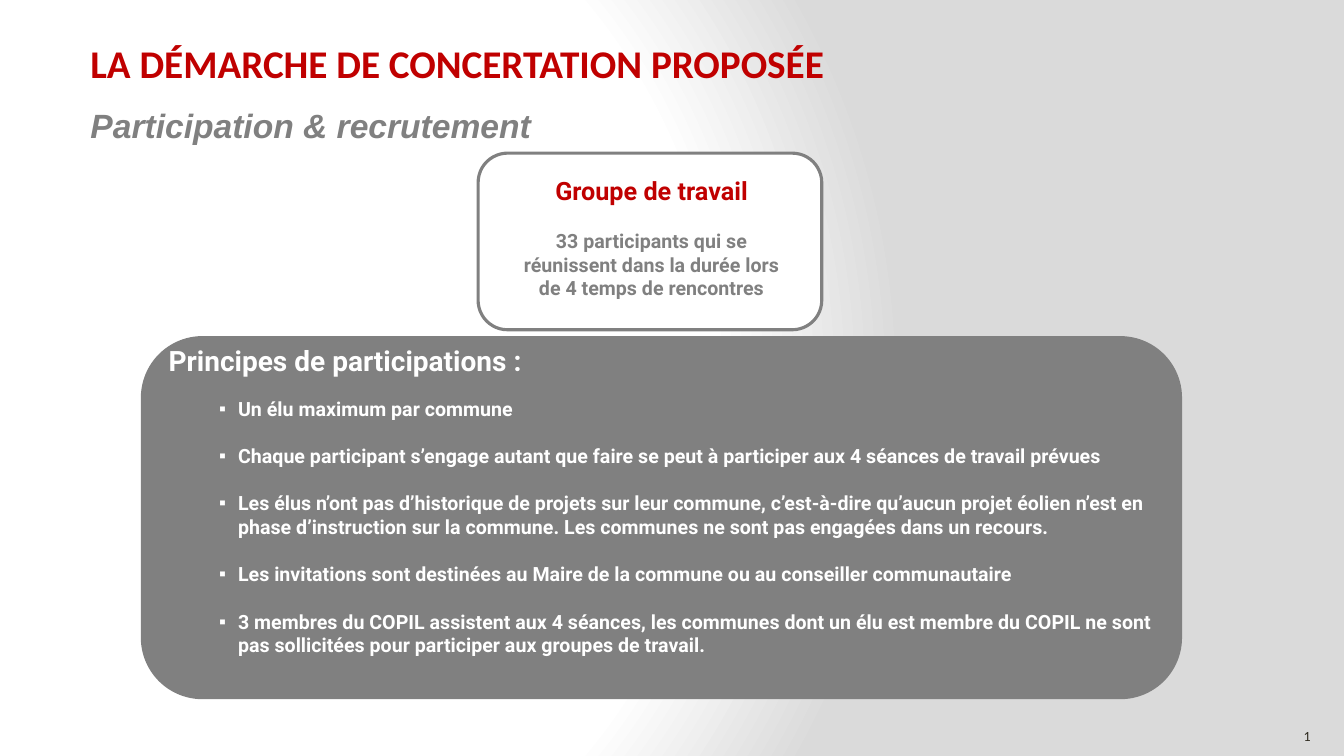
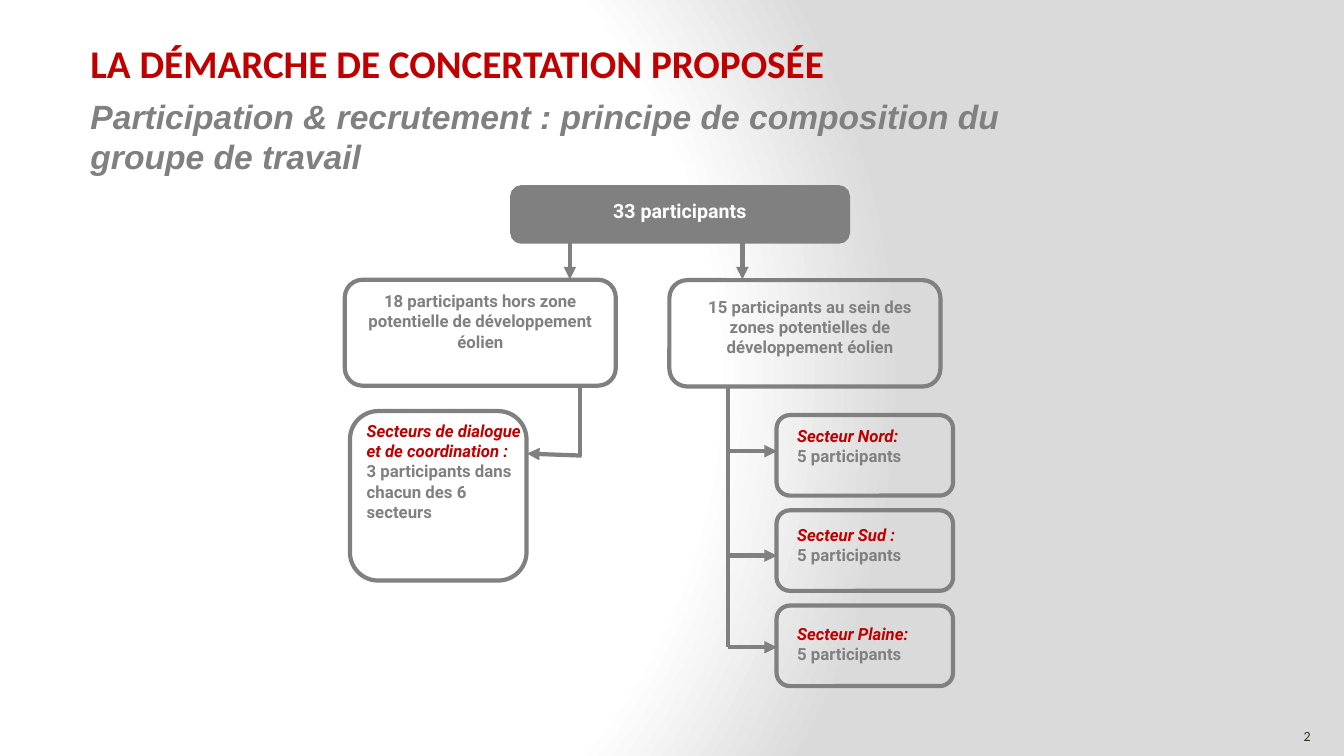
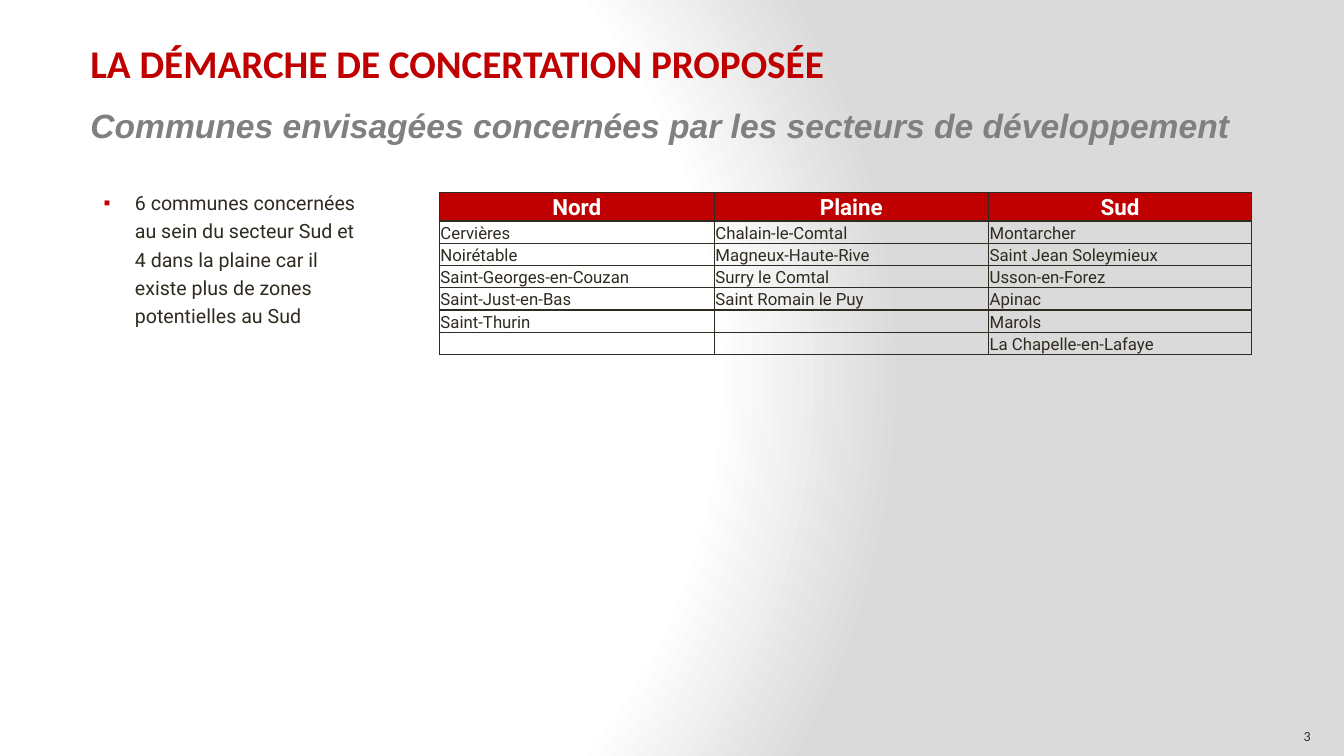
from lxml.etree import SubElement
from pptx import Presentation
from pptx.dml.color import RGBColor
from pptx.enum.shapes import MSO_CONNECTOR, MSO_SHAPE
from pptx.enum.text import MSO_ANCHOR, PP_ALIGN
from pptx.oxml import parse_xml
from pptx.oxml.ns import nsdecls, qn
from pptx.util import Cm, Pt

RED, GREY, WHITE, INK, SHADE = "C00000", "808080", "FFFFFF", "2F2B20", "DADADA"
BODY_FONT = "Roboto"
CENTER = PP_ALIGN.CENTER
TITLE = "LA DÉMARCHE DE CONCERTATION PROPOSÉE"

# Areas are (left, top, width, height) in centimetres.
SUBTITLES = [
    ("Participation & recrutement", (2.03, 2.51, 21.69, 1.88)),
    ("Participation & recrutement : principe de composition du groupe de travail",
     (2.03, 2.29, 25.63, 2.9)),
    ("Communes envisagées concernées par les secteurs de développement",
     (2.03, 2.51, 29.51, 1.88)),
]

GROUP_HEADING = "Groupe de travail"
GROUP_TEXT = "33 participants qui se réunissent dans la durée lors de 4 temps de rencontres"
PRINCIPLES_HEADING = "Principes de participations :"
PRINCIPLES = [
    "Un élu maximum par commune",
    "Chaque participant s’engage autant que faire se peut à participer aux 4 séances "
    "de travail prévues",
    "Les élus n’ont pas d’historique de projets sur leur commune, c’est-à-dire qu’aucun "
    "projet éolien n’est en phase d’instruction sur la commune. Les communes ne sont pas "
    "engagées dans un recours.",
    "Les invitations sont destinées au Maire de la commune ou au conseiller communautaire",
    "3 membres du COPIL assistent aux 4 séances, les communes dont un élu est membre du "
    "COPIL ne sont pas sollicitées pour participer aux groupes de travail.",
]

TOTAL = "33 participants"
BRANCHES = [  # text, outline area, text area, x of the arrow from the total
    ("18 participants hors zone potentielle de développement éolien",
     (8.69, 7.05, 6.83, 2.67), (8.69, 7.21, 6.83, 1.8), 14.36),
    ("15 participants au sein des zones potentielles de développement éolien",
     (16.87, 7.06, 6.83, 2.68), (17, 7.35, 6.83, 2.16), 18.71),
]
DIALOGUE = ("Secteurs de dialogue et de coordination :",
            "3 participants dans chacun des 6 secteurs")
SECTOR_SIZE = "5 participants"
SECTORS = [("Secteur Nord:", 11.37), ("Secteur Sud :", 14), ("Secteur Plaine:", 16.31)]

COMMUNES_NOTE = ("6 communes concernées au sein du secteur Sud et 4 dans la plaine "
                 "car il existe plus de zones potentielles au Sud")
COMMUNES = {
    "Nord": ["Cervières", "Noirétable", "Saint-Georges-en-Couzan", "Saint-Just-en-Bas",
             "Saint-Thurin"],
    "Plaine": ["Chalain-le-Comtal", "Magneux-Haute-Rive", "Surry le Comtal",
               "Saint Romain le Puy"],
    "Sud": ["Montarcher", "Saint Jean Soleymieux", "Usson-en-Forez", "Apinac", "Marols",
            "La Chapelle-en-Lafaye"],
}
COLUMN_WIDTHS = [6.93, 6.91, 6.63]


def color(hex_text):
    return RGBColor.from_string(hex_text)


def lengths(area):
    return [Cm(value) for value in area]


def add_bullet(paragraph, hex_text, margin, hanging):
    properties = paragraph._p.get_or_add_pPr()
    properties.set("marL", str(Cm(margin)))
    properties.set("indent", str(-Cm(hanging)))
    bullet_color = SubElement(properties, qn("a:buClr"))
    SubElement(bullet_color, qn("a:srgbClr"), val=hex_text)
    SubElement(properties, qn("a:buFont"), typeface="Arial")
    SubElement(properties, qn("a:buChar"), char="▪")


def write(paragraph, text, size=14, font=BODY_FONT, ink=GREY, bold=True, italic=False,
          align=PP_ALIGN.LEFT, before=0, spacing=None, bullet=None):
    """Fill a paragraph; bullet is (colour, margin, hanging indent)."""
    paragraph.alignment = align
    paragraph.space_before = Pt(before)
    if spacing:
        paragraph.line_spacing = spacing
    if bullet:
        add_bullet(paragraph, *bullet)
    if not text:
        SubElement(paragraph._p, qn("a:endParaRPr"), sz=str(size * 100))
        return
    run = paragraph.add_run()
    run.text = text
    run.font.size, run.font.name = Pt(size), font
    run.font.bold, run.font.italic = bold, italic
    run.font.color.rgb = color(ink)


def add_text(slide, area, *items, wrap=True, **shared):
    """Add a text box; each item is a text or a (text, format) pair."""
    frame = slide.shapes.add_textbox(*lengths(area)).text_frame
    frame.word_wrap = wrap
    for index, item in enumerate(items):
        text, own = (item, {}) if isinstance(item, str) else item
        paragraph = frame.add_paragraph() if index else frame.paragraphs[0]
        write(paragraph, text, **{**shared, **own})


def add_panel(slide, area, fill=None, line=GREY, width=3, kind=MSO_SHAPE.ROUNDED_RECTANGLE):
    shape = slide.shapes.add_shape(kind, *lengths(area))
    shape.shadow.inherit = False
    if fill:
        shape.fill.solid()
        shape.fill.fore_color.rgb = color(fill)
    else:
        shape.fill.background()
    if line:
        shape.line.color.rgb = color(line)
        shape.line.width = Pt(width)
    else:
        shape.line.fill.background()
    return shape


def add_line(slide, *ends, arrow=True):
    line = slide.shapes.add_connector(MSO_CONNECTOR.STRAIGHT, *lengths(ends))
    line.line.color.rgb = color(GREY)
    line.line.width = Pt(3)
    properties = line._element.spPr
    if arrow:
        SubElement(properties.find(qn("a:ln")), qn("a:tailEnd"), type="triangle")
    SubElement(properties, qn("a:effectLst"))


def set_background(master):
    master.background.fill.solid()
    solid = master.element.find(".//" + qn("p:bgPr")).find(qn("a:solidFill"))
    stops = "".join(f'<a:gs pos="{position}000"><a:srgbClr val="{shade}"/></a:gs>'
                    for position, shade in [(0, WHITE), (75, WHITE), (100, SHADE)])
    gradient = parse_xml(
        f'<a:gradFill {nsdecls("a")} rotWithShape="1"><a:gsLst>{stops}</a:gsLst>'
        '<a:path path="circle"><a:fillToRect l="20000" t="50000" r="100000" b="50000"/>'
        '</a:path></a:gradFill>')
    solid.getparent().replace(solid, gradient)


def add_page_number(slide, number):
    shape = add_panel(slide, (31.93, 18, 2.03, 1.09), line=None, kind=MSO_SHAPE.DOUBLE_BRACKET)
    frame = shape.text_frame
    frame.vertical_anchor = MSO_ANCHOR.MIDDLE
    frame.margin_left = frame.margin_right = frame.margin_top = frame.margin_bottom = 0
    write(frame.paragraphs[0], str(number), size=10, font="Calibri", ink=INK, bold=False,
          align=CENTER)


def add_base_slide(presentation, number, subtitle, area):
    """Add a slide with the shared corner, title, subtitle and page number."""
    slide = presentation.slides.add_slide(presentation.slide_layouts[6])
    add_panel(slide, (0, 13.54, 8.13, 5.51), WHITE, line=None, kind=MSO_SHAPE.RECTANGLE)
    add_page_number(slide, number)
    add_text(slide, (2.03, 0.86, 28.96, 1.45), TITLE, size=28, font="Calibri", ink=RED)
    add_text(slide, area, subtitle, size=24, font="Arial", italic=True)
    return slide


def build_principles(slide):
    add_panel(slide, (3.59, 8.51, 26.16, 9.07), GREY, width=2.25)
    add_panel(slide, (12.05, 3.86, 8.66, 4.45), WHITE, width=2.25)
    add_text(slide, (12.71, 4.29, 7.42, 4.01), (GROUP_HEADING, dict(size=18, ink=RED)),
             (GROUP_TEXT, dict(before=17)), align=CENTER)
    bullets = [(text, dict(before=17 if index else 14, bullet=(WHITE, 1.75, 0.48)))
               for index, text in enumerate(PRINCIPLES)]
    add_text(slide, (4, 8.53, 25.35, 8.81), (PRINCIPLES_HEADING, dict(size=20)),
             *bullets, ink=WHITE)


def build_composition(slide):
    heading = dict(ink=RED, italic=True)
    add_panel(slide, (12.91, 4.72, 8.46, 1.37), GREY)
    add_text(slide, (13.72, 4.88, 6.83, 0.86), TOTAL, ink=WHITE, align=CENTER)
    for text, outline, text_area, arrow_x in BRANCHES:
        add_panel(slide, outline)
        add_text(slide, text_area, text, size=12, align=CENTER)
        add_line(slide, arrow_x, 6.1, arrow_x, 7.04)

    trunk_x, trunk_top = 18.35, 9.73
    add_line(slide, trunk_x, trunk_top, trunk_x, SECTORS[-1][1], arrow=False)
    for index, (name, arrow_y) in enumerate(SECTORS):
        add_panel(slide, (19.57, 10.46 + 2.4 * index, 4.45, 2.03))
        add_text(slide, (19.84, 10.61 + 2.49 * index, 4.17, 1.55), (name, heading),
                 SECTOR_SIZE, size=12, wrap=False)
        add_line(slide, trunk_x, arrow_y, 19.58, arrow_y)

    add_line(slide, 14.61, trunk_top, 14.61, 11.48, arrow=False)
    add_line(slide, 14.66, 11.48, 13.28, 11.43)
    add_panel(slide, (8.82, 10.36, 4.45, 4.27))
    add_text(slide, (8.99, 10.48, 4.57, 4.01), (DIALOGUE[0], heading), DIALOGUE[1], size=12)


def add_borders(cell):
    properties = cell._tc.get_or_add_tcPr()
    for side in ("a:lnL", "a:lnR", "a:lnT", "a:lnB"):
        border = SubElement(properties, qn(side), w=str(Pt(1)))
        fill = SubElement(border, qn("a:solidFill"))
        SubElement(fill, qn("a:srgbClr"), val=INK)


def format_cell(cell, text, is_header):
    cell.margin_left = cell.margin_right = cell.margin_top = Cm(0.03)
    cell.margin_bottom = 0
    cell.vertical_anchor = MSO_ANCHOR.BOTTOM
    add_borders(cell)
    paragraph = cell.text_frame.paragraphs[0]
    if is_header:
        cell.fill.solid()
        cell.fill.fore_color.rgb = color(RED)
        write(paragraph, text, size=16, ink=WHITE, align=CENTER)
    else:
        cell.fill.background()
        write(paragraph, text, size=12, ink=INK, bold=False)


def build_communes(slide):
    row_count = 1 + max(len(names) for names in COMMUNES.values())
    header_height, row_height = 0.72, 0.56
    height = header_height + row_height * (row_count - 1)
    area = (11.07, 4.85, sum(COLUMN_WIDTHS), height)
    table = slide.shapes.add_table(row_count, len(COMMUNES), *lengths(area)).table
    table.first_row = table.horz_banding = False
    for index, row in enumerate(table.rows):
        row.height = Cm(row_height if index else header_height)
    for column, (sector, names) in enumerate(COMMUNES.items()):
        table.columns[column].width = Cm(COLUMN_WIDTHS[column])
        texts = [sector] + names
        for row in range(row_count):
            text = texts[row] if row < len(texts) else ""
            format_cell(table.cell(row, column), text, row == 0)
    add_text(slide, (2.36, 4.57, 7.01, 3.84), COMMUNES_NOTE, ink=INK, bold=False,
             spacing=1.2, bullet=(RED, 0.79, 0.79))


def main():
    presentation = Presentation()
    presentation.slide_width, presentation.slide_height = Cm(33.87), Cm(19.05)
    set_background(presentation.slide_master)
    builders = [build_principles, build_composition, build_communes]
    for number, (build, (subtitle, area)) in enumerate(zip(builders, SUBTITLES), start=1):
        build(add_base_slide(presentation, number, subtitle, area))
    presentation.save("out.pptx")


if __name__ == "__main__":
    main()
